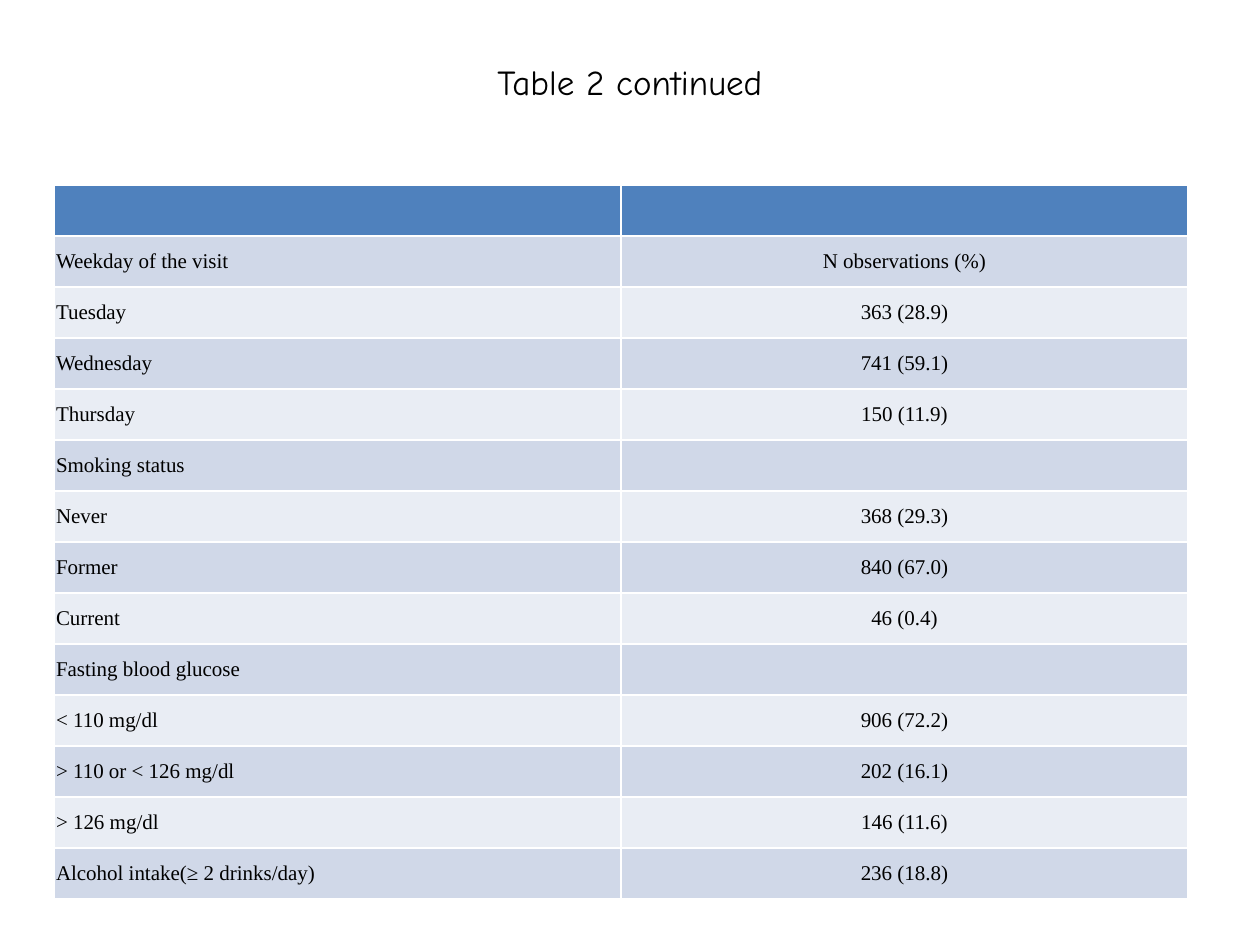
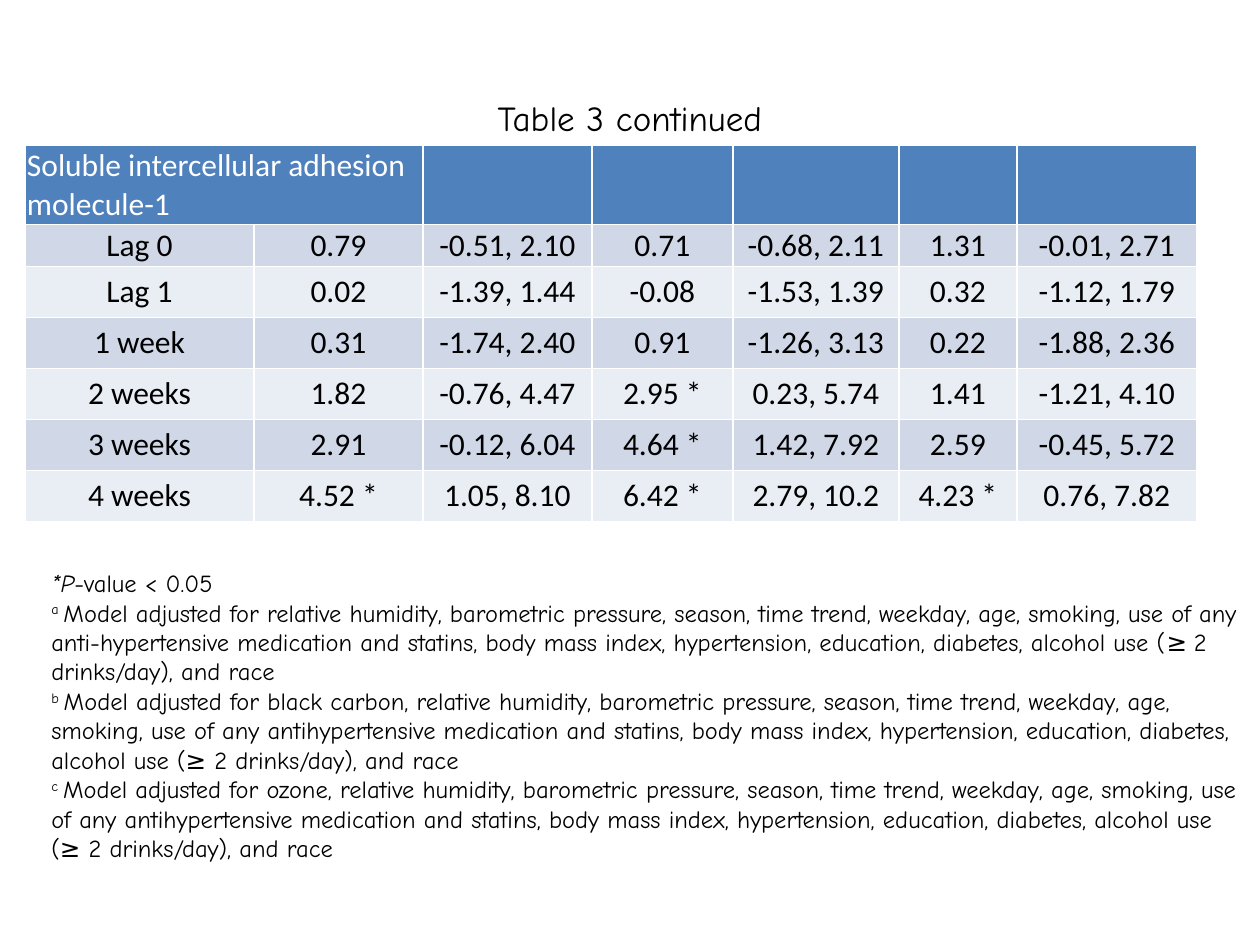
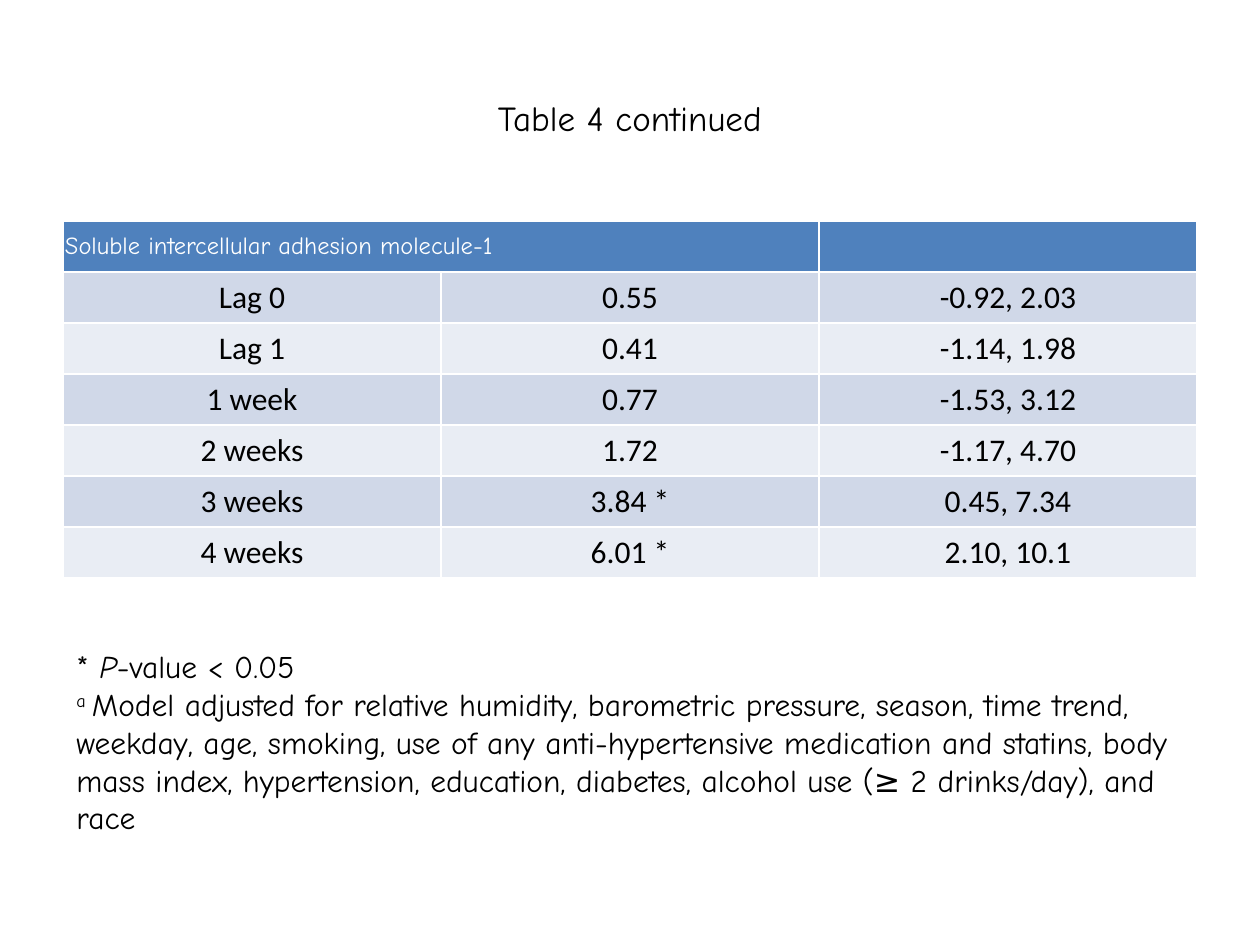
from pptx import Presentation
from pptx.dml.color import RGBColor
from pptx.enum.text import MSO_ANCHOR, MSO_AUTO_SIZE, PP_ALIGN
from pptx.util import Emu, Pt

# Shared scale, colours and fonts
PX_PER_INCH = 126
BLACK, WHITE = "000000", "FFFFFF"
HEADER_FILL = "4F81BD"
BAND_FILLS = ("D0D8E8", "E9EDF4")
HAND_FONT, PLAIN_FONT, SERIF_FONT = "Comic Neue", "Calibri", "Times New Roman"
ROW_HEIGHT = 51
CELL_MARGIN = 2

# Table contents
MOLECULE = "Soluble intercellular adhesion molecule-1"
VISIT_ROWS = [
    ("", ""),
    ("Weekday of the visit", "N observations (%)"),
    ("Tuesday", "363 (28.9)"),
    ("Wednesday", "741 (59.1)"),
    ("Thursday", "150 (11.9)"),
    ("Smoking status", ""),
    ("Never", "368 (29.3)"),
    ("Former", "840 (67.0)"),
    ("Current", "46 (0.4)"),
    ("Fasting blood glucose", ""),
    ("< 110 mg/dl", "906 (72.2)"),
    ("> 110 or < 126 mg/dl", "202 (16.1)"),
    ("> 126 mg/dl", "146 (11.6)"),
    ("Alcohol intake(≥ 2 drinks/day)", "236 (18.8)"),
]
THREE_MODEL_ROWS = [
    (MOLECULE, "", "", "", "", "", ""),
    ("Lag 0", "0.79", "-0.51, 2.10", "0.71", "-0.68, 2.11", "1.31", "-0.01, 2.71"),
    ("Lag 1", "0.02", "-1.39, 1.44", "-0.08", "-1.53, 1.39", "0.32", "-1.12, 1.79"),
    ("1 week", "0.31", "-1.74, 2.40", "0.91", "-1.26, 3.13", "0.22", "-1.88, 2.36"),
    ("2 weeks", "1.82", "-0.76, 4.47", "2.95 *", "0.23, 5.74", "1.41", "-1.21, 4.10"),
    ("3 weeks", "2.91", "-0.12, 6.04", "4.64 *", "1.42, 7.92", "2.59", "-0.45, 5.72"),
    ("4 weeks", "4.52 *", "1.05, 8.10", "6.42 *", "2.79, 10.2", "4.23 *", "0.76, 7.82"),
]
ONE_MODEL_ROWS = [
    (MOLECULE, "", ""),
    ("Lag 0", "0.55", "-0.92, 2.03"),
    ("Lag 1", "0.41", "-1.14, 1.98"),
    ("1 week", "0.77", "-1.53, 3.12"),
    ("2 weeks", "1.72", "-1.17, 4.70"),
    ("3 weeks", "3.84 *", "0.45, 7.34"),
    ("4 weeks", "6.01 *", "2.10, 10.1"),
]


def px(length):
    return Emu(round(length * 914400 / PX_PER_INCH))


def color(hex_string):
    return RGBColor.from_string(hex_string)


def set_font(paragraph, name, size, hex_string=BLACK):
    font = paragraph.font
    font.name, font.size, font.bold = name, Pt(size), False
    font.color.rgb = color(hex_string)


def add_text_frame(slide, left, top, width, height):
    shape = slide.shapes.add_textbox(px(left), px(top), px(width), px(height))
    shape.text_frame.word_wrap = True
    return shape.text_frame


def add_title(slide, text, height):
    frame = add_text_frame(slide, 63, 38, 1134, height)
    frame.vertical_anchor = MSO_ANCHOR.MIDDLE
    paragraph = frame.paragraphs[0]
    paragraph.text = text
    paragraph.alignment = PP_ALIGN.CENTER
    set_font(paragraph, HAND_FONT, 20)


def fill_cell(cell, text, fill, alignment, font):
    cell.fill.solid()
    cell.fill.fore_color.rgb = color(fill)
    cell.vertical_anchor = MSO_ANCHOR.MIDDLE
    cell.margin_left = cell.margin_right = px(CELL_MARGIN)
    cell.margin_top = cell.margin_bottom = px(CELL_MARGIN)
    paragraph = cell.text_frame.paragraphs[0]
    paragraph.text = text
    paragraph.alignment = alignment
    set_font(paragraph, *font)


def add_banded_table(slide, left, top, widths, rows, body_font,
                     header_font=(PLAIN_FONT, 18), labels_centred=True):
    frame = slide.shapes.add_table(len(rows), len(widths), px(left), px(top),
                                   px(sum(widths)), px(ROW_HEIGHT * len(rows)))
    table = frame.table
    for column, width in zip(table.columns, widths):
        column.width = px(width)
    for row_index, row in enumerate(rows):
        table.rows[row_index].height = px(ROW_HEIGHT)
        is_header = row_index == 0
        fill = HEADER_FILL if is_header else BAND_FILLS[(row_index - 1) % 2]
        font = (*header_font, WHITE) if is_header else body_font
        for column_index, text in enumerate(row):
            at_left = column_index == 0 and (is_header or not labels_centred)
            alignment = PP_ALIGN.LEFT if at_left else PP_ALIGN.CENTER
            fill_cell(table.cell(row_index, column_index), text, fill, alignment, font)
    if rows[0][0]:
        table.cell(0, 0).merge(table.cell(0, 1))
    return table


def add_footnotes(slide, left, top, width, height, size, significance, models):
    """Significance is (text, italic) parts; models are the covariates that lead each note."""
    frame = add_text_frame(slide, left, top, width, height)
    frame.auto_size = MSO_AUTO_SIZE.SHAPE_TO_FIT_TEXT
    paragraph = frame.paragraphs[0]
    set_font(paragraph, HAND_FONT, size)
    for text, italic in significance:
        run = paragraph.add_run()
        run.text = text
        run.font.italic = italic
    for mark, (exposure, medication) in zip("abc", models):
        paragraph = frame.add_paragraph()
        set_font(paragraph, HAND_FONT, size)
        superscript = paragraph.add_run()
        superscript.text = f"{mark} "
        superscript.font._element.set("baseline", "30000")
        paragraph.add_run().text = (
            f"Model adjusted for {exposure}relative humidity, barometric pressure, season, "
            f"time trend, weekday, age, smoking, use of any {medication} medication and "
            "statins, body mass index, hypertension, education, diabetes, "
            "alcohol use (≥ 2 drinks/day), and race")


def main():
    presentation = Presentation()
    presentation.slide_width, presentation.slide_height = px(1260), px(945)
    blank = presentation.slide_layouts[6]
    base_model = ("", "anti-hypertensive")

    # Visit characteristics
    slide = presentation.slides.add_slide(blank)
    add_title(slide, "Table 2 continued", 87)
    add_banded_table(slide, 54, 185, [567, 567], VISIT_ROWS, (SERIF_FONT, 12),
                     labels_centred=False)

    # Three adjusted models
    slide = presentation.slides.add_slide(blank)
    add_title(slide, "Table 3 continued", 158)
    table = add_banded_table(slide, 25, 145, [229, 169, 169, 141, 166, 118, 180],
                             THREE_MODEL_ROWS, (PLAIN_FONT, 18))
    table.rows[1].height = px(42)
    add_footnotes(slide, 39, 562, 1221, 310, 14,
                  [("*P", True), ("-value < 0.05", False)],
                  [base_model, ("black carbon, ", "antihypertensive"),
                   ("ozone, ", "antihypertensive")])

    # Single adjusted model
    slide = presentation.slides.add_slide(blank)
    add_title(slide, "Table 4 continued", 158)
    add_banded_table(slide, 63, 221, [378] * 3, ONE_MODEL_ROWS, (PLAIN_FONT, 18),
                     header_font=(HAND_FONT, 14))
    add_footnotes(slide, 64, 641, 1142, 204, 18,
                  [("* ", False), ("P", True), ("-value < 0.05", False)], [base_model])

    presentation.save("out.pptx")


if __name__ == "__main__":
    main()
